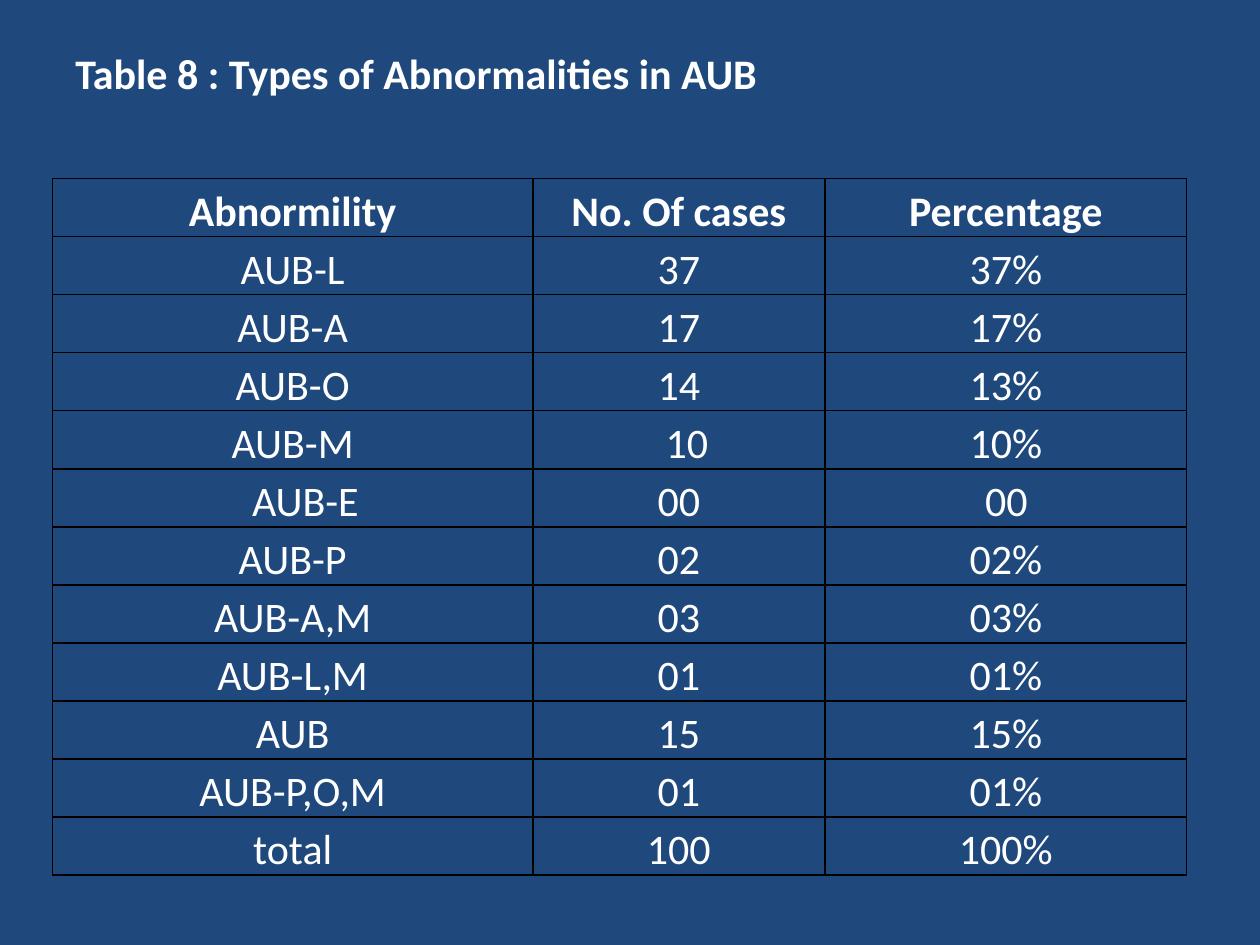
from dataclasses import dataclass
from typing import Optional

from lxml.etree import SubElement
from pptx import Presentation
from pptx.dml.color import RGBColor
from pptx.enum.text import MSO_AUTO_SIZE, PP_ALIGN
from pptx.oxml.ns import qn
from pptx.util import Cm, Pt


@dataclass(frozen=True)
class Theme:
    background: RGBColor = RGBColor(0x1F, 0x49, 0x7D)
    text: RGBColor = RGBColor(0xFF, 0xFF, 0xFF)
    border: str = "000000"
    border_width: Pt = Pt(1)
    font: str = "Calibri"
    size: Pt = Pt(24)
    line_spacing: float = 1.15


@dataclass(frozen=True)
class Entry:
    """Cell text: centred, or left-aligned when an indent is given."""
    text: str
    indent: Optional[Cm] = None


THEME = Theme()
COLUMN_WIDTHS = (Cm(9.68), Cm(5.89), Cm(7.29))
ROW_HEIGHT = Cm(1.17)
CELL_MARGINS = {"margin_left": Cm(0.18), "margin_right": Cm(0.18),
                "margin_top": 0, "margin_bottom": 0}
ROWS = (
    ("Abnormility", "No. Of cases", "Percentage"),
    ("AUB-L", "37", "37%"),
    ("AUB-A", "17", "17%"),
    ("AUB-O", "14", "13%"),
    ("AUB-M", Entry("10", Cm(2.5)), "10%"),
    (Entry("AUB-E", Cm(3.84)), "00", Entry("00", Cm(3.05))),
    ("AUB-P", "02", "02%"),
    ("AUB-A,M", "03", "03%"),
    ("AUB-L,M", "01", "01%"),
    ("AUB", "15", "15%"),
    ("AUB-P,O,M", "01", "01%"),
    ("total", "100", "100%"),
)


def add_text(p, text: str, bold: bool) -> None:
    r = p.add_run()
    r.text = text
    formats = {"name": THEME.font, "size": THEME.size, "bold": bold}
    for name, value in formats.items():
        setattr(r.font, name, value)
    r.font.color.rgb = THEME.text


def add_borders(cell) -> None:
    """Outline the cell; must run before the fill is set, as lines come first."""
    tc_pr = cell._tc.get_or_add_tcPr()
    for side in ("a:lnL", "a:lnR", "a:lnT", "a:lnB"):
        ln = SubElement(tc_pr, qn(side), w=str(THEME.border_width))
        fill = SubElement(ln, qn("a:solidFill"))
        SubElement(fill, qn("a:srgbClr"), val=THEME.border)


def fill_cell(cell, entry: Entry, bold: bool) -> None:
    for name, value in CELL_MARGINS.items():
        setattr(cell, name, value)
    add_borders(cell)
    cell.fill.background()
    p = cell.text_frame.paragraphs[0]
    p.line_spacing = THEME.line_spacing
    if entry.indent is None:
        p.alignment = PP_ALIGN.CENTER
    else:
        p.alignment = PP_ALIGN.LEFT
        p._p.get_or_add_pPr().set("marL", str(entry.indent))
    add_text(p, entry.text, bold)


def add_title(s, text: str) -> None:
    tf = s.shapes.add_textbox(Cm(1.27), Cm(0.84), Cm(19.05), Cm(1.27)).text_frame
    tf.word_wrap = True
    tf.auto_size = MSO_AUTO_SIZE.SHAPE_TO_FIT_TEXT
    add_text(tf.paragraphs[0], text, bold=True)


def add_case_table(s) -> None:
    table = s.shapes.add_table(
        len(ROWS), len(COLUMN_WIDTHS), Cm(1.06), Cm(3.6),
        sum(COLUMN_WIDTHS), ROW_HEIGHT * len(ROWS)).table
    table.first_row = table.horz_banding = False
    for column, width in zip(table.columns, COLUMN_WIDTHS):
        column.width = width
    for i, row in enumerate(ROWS):
        table.rows[i].height = ROW_HEIGHT
        for j, value in enumerate(row):
            entry = value if isinstance(value, Entry) else Entry(value)
            fill_cell(table.cell(i, j), entry, bold=i == 0)


def main() -> None:
    prs = Presentation()
    prs.slide_width, prs.slide_height = Cm(25.4), Cm(19.05)
    s = prs.slides.add_slide(prs.slide_layouts[6])
    s.background.fill.solid()
    s.background.fill.fore_color.rgb = THEME.background
    add_title(s, "Table 8 : Types of Abnormalities in AUB")
    add_case_table(s)
    prs.save("out.pptx")


if __name__ == "__main__":
    main()
